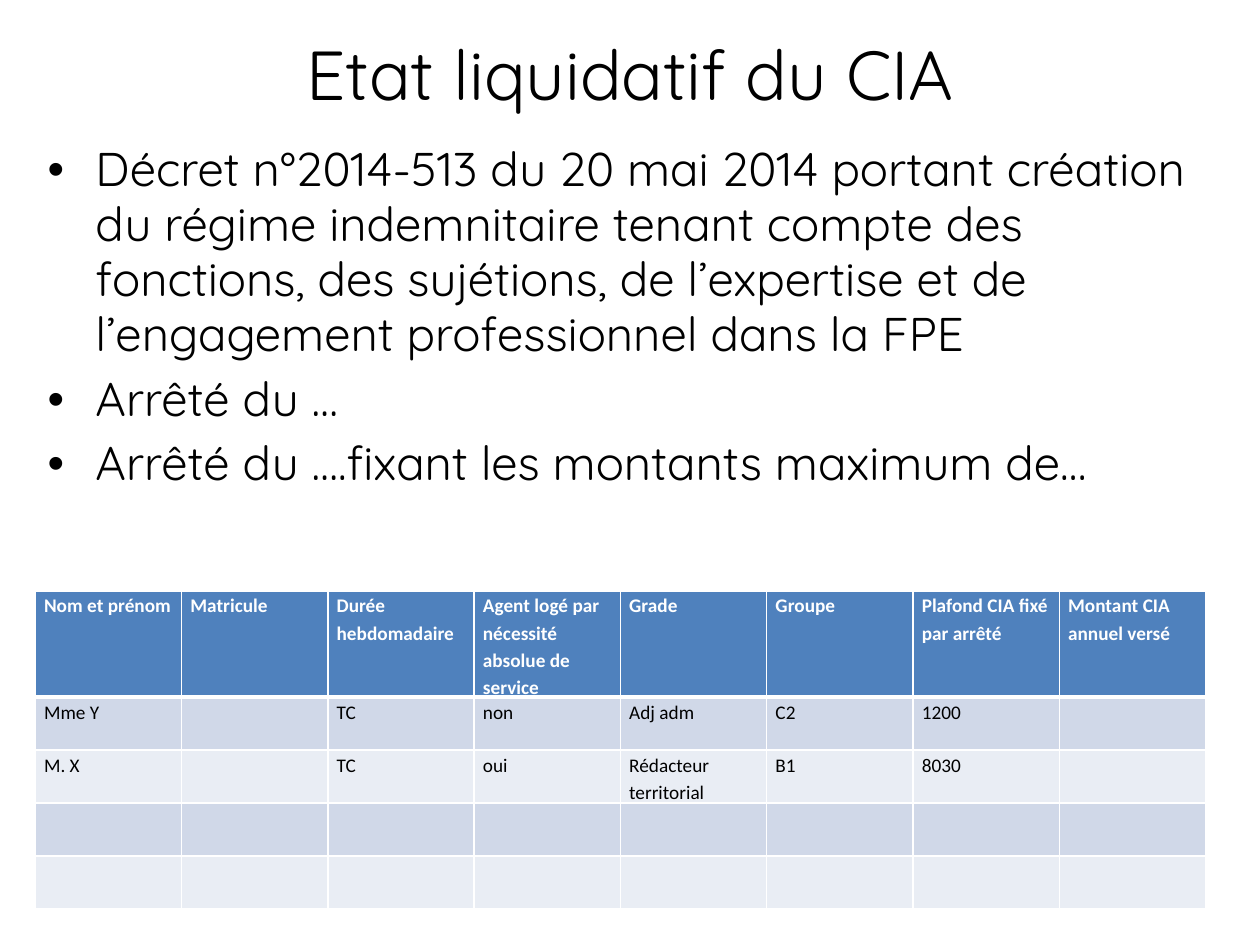
"""Build the slide on the CIA payment statement, with its legal references and table."""
from dataclasses import dataclass

from lxml.etree import SubElement
from pptx import Presentation
from pptx.dml.color import RGBColor
from pptx.enum.text import MSO_ANCHOR, MSO_AUTO_SIZE, PP_ALIGN
from pptx.oxml.ns import qn
from pptx.util import Inches, Pt


@dataclass(frozen=True)
class Theme:
    text: str = "000000"
    white: str = "FFFFFF"
    header: str = "4F81BD"
    bands: tuple = ("D0D8E8", "E9EDF4")
    text_font: str = "Quicksand"
    table_font: str = "Calibri"
    title_size: float = 39.6
    body_size: float = 27
    table_size: float = 11


def write(paragraph, text, *, font, size, color, bold=False,
          align=PP_ALIGN.LEFT, line_spacing=1.0, space_before=0):
    paragraph.alignment = align
    paragraph.line_spacing = line_spacing
    paragraph.space_before = Pt(space_before)
    run = paragraph.add_run()
    run.text = text
    run.font.name = font
    run.font.size = Pt(size)
    run.font.bold = bold
    run.font.color.rgb = RGBColor.from_string(color)


def add_border(cell, side, width, color):
    line = SubElement(cell._tc.get_or_add_tcPr(), qn(f"a:ln{side}"), w=str(Pt(width)))
    fill = SubElement(line, qn("a:solidFill"))
    SubElement(fill, qn("a:srgbClr"), val=color)


theme = Theme()
references = [
    "Décret n°2014-513 du 20 mai 2014 portant création du régime indemnitaire tenant compte "
    "des fonctions, des sujétions, de l’expertise et de l’engagement professionnel dans la FPE",
    "Arrêté du …",
    "Arrêté du ….fixant les montants maximum de…",
]
rows = [
    ["Nom et prénom", "Matricule", "Durée hebdomadaire",
     "Agent logé par nécessité absolue de service", "Grade", "Groupe",
     "Plafond CIA fixé par arrêté", "Montant CIA annuel versé"],
    ["Mme Y", "", "TC", "non", "Adj adm", "C2", "1200", ""],
    ["M. X", "", "TC", "oui", "Rédacteur territorial", "B1", "8030", ""],
    [""] * 8,
    [""] * 8,
]

presentation = Presentation()
presentation.slide_width = Inches(10)
presentation.slide_height = Inches(7.5)
slide = presentation.slides.add_slide(presentation.slide_layouts.get_by_name("Title Only"))

title = slide.shapes.title
title.left, title.top = Inches(0.5), Inches(0.3)
title.width, title.height = Inches(9), Inches(1.25)
title_frame = title.text_frame
title_frame.auto_size = MSO_AUTO_SIZE.NONE
title_frame.vertical_anchor = MSO_ANCHOR.MIDDLE
title_frame.margin_bottom = Inches(0.74)
write(title_frame.paragraphs[0], "Etat liquidatif du CIA", font=theme.text_font,
      size=theme.title_size, color=theme.text, align=PP_ALIGN.CENTER)

body = slide.shapes.add_textbox(Inches(0.28), Inches(1.07), Inches(9.53), Inches(5.63))
body_frame = body.text_frame
body_frame.word_wrap = True
body_frame.margin_top = Inches(0.06)
for index, reference in enumerate(references):
    paragraph = body_frame.add_paragraph() if index else body_frame.paragraphs[0]
    write(paragraph, reference, font=theme.text_font, size=theme.body_size,
          color=theme.text, line_spacing=0.97,
          space_before=0.2 * theme.body_size if index else 0)
    properties = paragraph._p.get_or_add_pPr()
    properties.set("marL", str(Inches(0.38)))
    properties.set("indent", str(-Inches(0.38)))
    SubElement(properties, qn("a:buFont"), typeface="Arial")
    SubElement(properties, qn("a:buChar"), char="•")

table = slide.shapes.add_table(len(rows), len(rows[0]), Inches(0.28), Inches(4.69),
                               Inches(9.29), Inches(2.37)).table
for row_index, values in enumerate(rows):
    is_header = row_index == 0
    table.rows[row_index].height = Inches(0.69 if is_header else 0.42)
    widths = {"L": 1, "R": 1, "T": 3 if row_index == 1 else 1, "B": 3 if is_header else 1}
    for column_index, value in enumerate(values):
        cell = table.cell(row_index, column_index)
        cell.margin_left = cell.margin_right = Inches(0.07)
        cell.margin_top = cell.margin_bottom = 0
        for side, width in widths.items():
            add_border(cell, side, width, theme.white)
        cell.fill.solid()
        cell.fill.fore_color.rgb = RGBColor.from_string(
            theme.header if is_header else theme.bands[(row_index - 1) % 2])
        if value:
            write(cell.text_frame.paragraphs[0], value, font=theme.table_font,
                  size=theme.table_size, color=theme.white if is_header else theme.text,
                  bold=is_header, line_spacing=1.15)

presentation.save("out.pptx")
